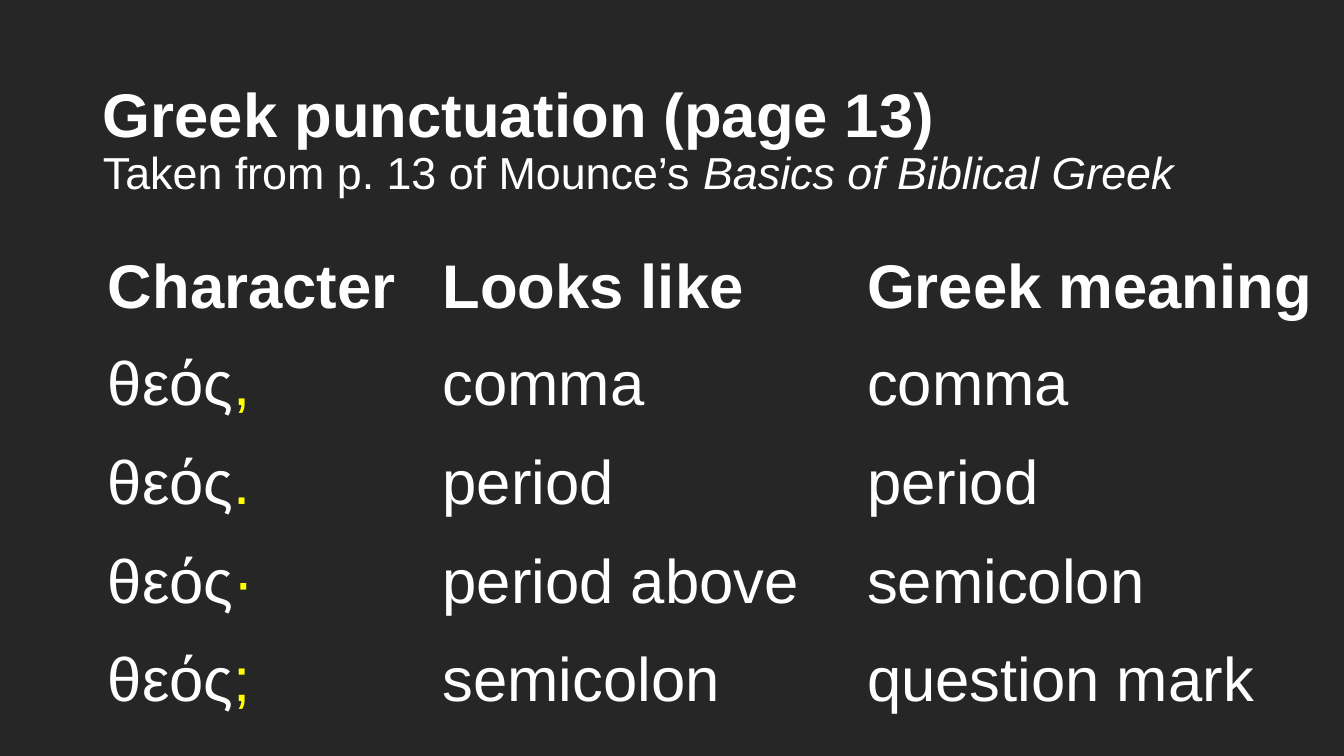
from pptx import Presentation
from pptx.dml.color import RGBColor
from pptx.enum.text import MSO_ANCHOR, MSO_AUTO_SIZE, PP_ALIGN
from pptx.util import Inches, Pt

BACKGROUND = "262626"
WHITE = "FFFFFF"
YELLOW = "FFFF00"
NO_STYLE_NO_GRID = "{2D5ABB26-0587-4C30-8999-92F81FD0307C}"

COLUMN_WIDTHS = [3.32, 4.21, 5.01]
HEADINGS = ["Character", "Looks like", "Greek meaning"]
GREEK_WORD = "θεός"
PUNCTUATION = [
    (",", "comma", "comma"),
    (".", "period", "period"),
    ("·", "period above", "semicolon"),
    (";", "semicolon", "question mark"),
]


def color(hex_string):
    return RGBColor.from_string(hex_string)


def set_font(font, size, bold=False):
    font.name = "Arial"
    font.size = Pt(size)
    font.bold = bold
    font.color.rgb = color(WHITE)


def add_title(slide, left, top, width, height):
    title = slide.shapes.title
    title.left, title.top = Inches(left), Inches(top)
    title.width, title.height = Inches(width), Inches(height)
    frame = title.text_frame
    frame.word_wrap = True
    frame.auto_size = MSO_AUTO_SIZE.NONE
    frame.vertical_anchor = MSO_ANCHOR.MIDDLE
    paragraph = frame.paragraphs[0]
    paragraph.alignment = PP_ALIGN.LEFT
    paragraph.line_spacing = 0.9
    heading = paragraph.add_run()
    heading.text = "Greek punctuation (page 13)"
    set_font(heading.font, 44, bold=True)
    paragraph.add_line_break()
    credit = paragraph.add_run()
    credit.text = "Taken from p. 13 of Mounce’s "
    set_font(credit.font, 32)
    book = paragraph.add_run()
    book.text = "Basics of Biblical Greek"
    set_font(book.font, 32)
    book.font.italic = True


def fill_cell(cell, text, mark="", heading=False):
    cell.fill.background()
    cell.margin_left = cell.margin_right = Inches(0.15)
    cell.margin_top = cell.margin_bottom = Inches(0.14)
    cell.vertical_anchor = MSO_ANCHOR.BOTTOM if heading else MSO_ANCHOR.TOP
    paragraph = cell.text_frame.paragraphs[0]
    set_font(paragraph.font, 44, bold=heading)
    paragraph.add_run().text = text
    if mark:
        mark_run = paragraph.add_run()
        mark_run.text = mark
        mark_run.font.color.rgb = color(YELLOW)
    for run in paragraph.runs:
        run.font.size = Pt(44)


def add_punctuation_table(slide, left, top, row_height):
    row_count = len(PUNCTUATION) + 1
    frame = slide.shapes.add_table(
        row_count, len(COLUMN_WIDTHS), Inches(left), Inches(top),
        Inches(sum(COLUMN_WIDTHS)), Inches(row_height * row_count))
    table = frame.table
    properties = frame._element.graphic.graphicData.tbl.tblPr
    properties[0].text = NO_STYLE_NO_GRID
    table.first_row = False
    table.horz_banding = False
    for column, width in zip(table.columns, COLUMN_WIDTHS):
        column.width = Inches(width)
    for column_index, heading in enumerate(HEADINGS):
        fill_cell(table.cell(0, column_index), heading, heading=True)
    for row_index, (mark, look, meaning) in enumerate(PUNCTUATION, start=1):
        fill_cell(table.cell(row_index, 0), GREEK_WORD, mark)
        fill_cell(table.cell(row_index, 1), look)
        fill_cell(table.cell(row_index, 2), meaning)


def main():
    presentation = Presentation()
    presentation.slide_width = Inches(13.33)
    presentation.slide_height = Inches(7.5)
    slide = presentation.slides.add_slide(presentation.slide_layouts[5])
    slide.background.fill.solid()
    slide.background.fill.fore_color.rgb = color(BACKGROUND)
    add_title(slide, 0.92, 0.68, 11.5, 1.45)
    add_punctuation_table(slide, 0.92, 2.35, 0.98)
    presentation.save("out.pptx")


if __name__ == "__main__":
    main()
